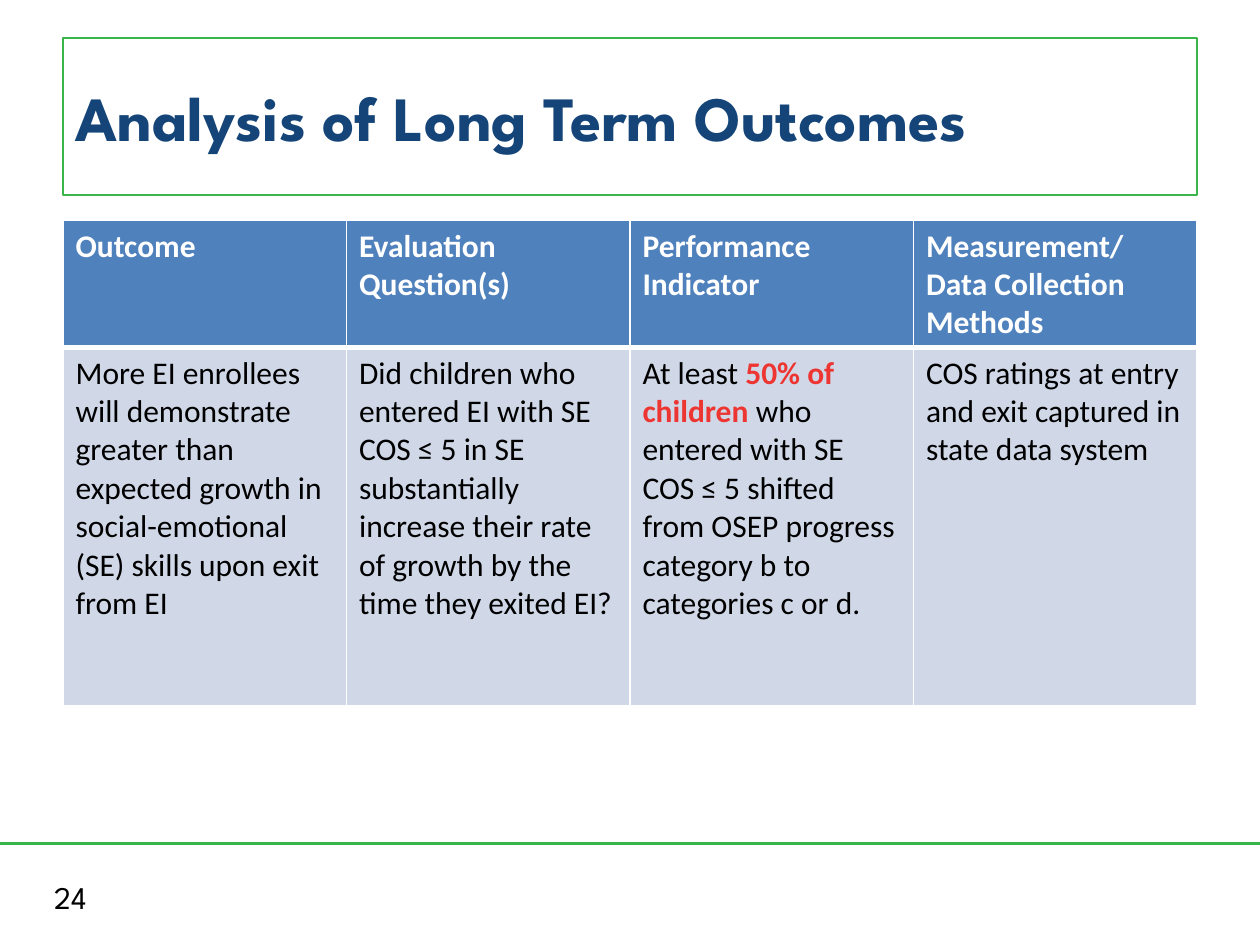
"""Build the long term outcomes analysis slide."""
from dataclasses import dataclass

import lxml.etree
import pptx
import pptx.dml.color
import pptx.enum.shapes
import pptx.enum.text
import pptx.oxml.ns
import pptx.util

Cm = pptx.util.Cm
Pt = pptx.util.Pt


@dataclass(frozen=True)
class Theme:
    green: str = "39B54A"
    navy: str = "154578"
    header_fill: str = "4F81BD"
    body_fill: str = "D0D8E8"
    white: str = "FFFFFF"
    black: str = "000000"
    red: str = "ED3532"
    heading_font: str = "League Spartan"
    table_font: str = "Calibri"
    title_size: int = 36
    text_size: int = 18
    thin_border: float = 1
    thick_border: float = 3


@dataclass(frozen=True)
class Style:
    font: str
    size: float
    color: str
    bold: bool = False


@dataclass(frozen=True)
class TextPart:
    text: str
    style: Style


@dataclass(frozen=True)
class TableRow:
    height: float
    fill: str
    top_border: float
    bottom_border: float
    cells: tuple[tuple[TextPart, ...], ...]


THEME = Theme()
TITLE = Style(THEME.heading_font, THEME.title_size, THEME.navy, True)
NUMBER = Style(THEME.heading_font, THEME.text_size, THEME.black)
HEADER = Style(THEME.table_font, THEME.text_size, THEME.white, True)
BODY = Style(THEME.table_font, THEME.text_size, THEME.black)
EMPHASIS = Style(THEME.table_font, THEME.text_size, THEME.red, True)

MARGIN = 1.27
CONTENT_WIDTH = 22.86
SLIDE_WIDTH = 25.4
SLIDE_HEIGHT = 19.05

HEADINGS = (
    "Outcome",
    "Evaluation Question(s)",
    "Performance Indicator",
    "Measurement/ Data Collection Methods",
)
DETAILS = (
    (TextPart("More EI enrollees will demonstrate greater than expected growth in "
              "social-emotional (SE) skills upon exit from EI", BODY),),
    (TextPart("Did children who entered EI with SE COS ≤ 5 in SE substantially "
              "increase their rate of growth by the time they exited EI?", BODY),),
    (
        TextPart("At least ", BODY),
        TextPart("50% of children ", EMPHASIS),
        TextPart("who entered with SE COS ≤ 5 shifted from OSEP progress "
                 "category b to categories c or d.", BODY),
    ),
    (TextPart("COS ratings at entry and exit captured in state data system", BODY),),
)
ROWS = (
    TableRow(2.56, THEME.header_fill, THEME.thin_border, THEME.thick_border,
             tuple((TextPart(heading, HEADER),) for heading in HEADINGS)),
    TableRow(7.21, THEME.body_fill, THEME.thick_border, THEME.thin_border, DETAILS),
)


def rgb(color: str) -> pptx.dml.color.RGBColor:
    """Convert a hex string to a colour."""
    return pptx.dml.color.RGBColor.from_string(color)


def write_text(text_frame, parts: tuple[TextPart, ...]) -> None:
    """Write styled parts into the first paragraph of a frame."""
    paragraph = text_frame.paragraphs[0]
    paragraph.alignment = pptx.enum.text.PP_ALIGN.LEFT
    for part in parts:
        run = paragraph.add_run()
        run.text = part.text
        style = part.style
        formats = {"name": style.font, "size": Pt(style.size), "bold": style.bold}
        for name, value in formats.items():
            setattr(run.font, name, value)
        run.font.color.rgb = rgb(style.color)


def set_borders(cell, top: float, bottom: float) -> None:
    """Give a cell white borders, placed before its fill."""
    widths = {"lnL": THEME.thin_border, "lnR": THEME.thin_border,
              "lnT": top, "lnB": bottom}
    qualify = pptx.oxml.ns.qn
    properties = cell._tc.get_or_add_tcPr()
    for index, (side, width) in enumerate(widths.items()):
        line = lxml.etree.Element(qualify(f"a:{side}"), w=str(Pt(width)))
        fill = lxml.etree.SubElement(line, qualify("a:solidFill"))
        lxml.etree.SubElement(fill, qualify("a:srgbClr"), val=THEME.white)
        properties.insert(index, line)


def draw_footer(slide) -> None:
    """Draw the footer rule and the page number."""
    rule_top = Cm(17)
    rule = slide.shapes.add_connector(
        pptx.enum.shapes.MSO_CONNECTOR.STRAIGHT, Cm(0), rule_top, Cm(SLIDE_WIDTH), rule_top)
    rule.line.color.rgb = rgb(THEME.green)
    rule.line.width = Pt(1.5)
    lxml.etree.SubElement(rule._element.spPr, pptx.oxml.ns.qn("a:effectLst"))
    number = slide.shapes.add_textbox(Cm(0.84), Cm(17.58), Cm(5.92), Cm(1.02))
    number.text_frame.word_wrap = True
    write_text(number.text_frame, (TextPart("24", NUMBER),))


def draw_title(slide) -> None:
    """Draw the outlined title box."""
    title = slide.shapes.add_shape(
        pptx.enum.shapes.MSO_SHAPE.RECTANGLE,
        Cm(MARGIN), Cm(0.76), Cm(CONTENT_WIDTH), Cm(3.18))
    title.shadow.inherit = False
    title.fill.background()
    title.line.color.rgb = rgb(THEME.green)
    title.line.width = Pt(1)
    formats = {"word_wrap": True, "vertical_anchor": pptx.enum.text.MSO_ANCHOR.MIDDLE}
    for name, value in formats.items():
        setattr(title.text_frame, name, value)
    write_text(title.text_frame, (TextPart("Analysis of Long Term Outcomes", TITLE),))


def draw_table(slide, rows: tuple[TableRow, ...]) -> None:
    """Draw the outcomes table with equal columns."""
    column_count = len(HEADINGS)
    table = slide.shapes.add_table(
        len(rows), column_count, Cm(MARGIN), Cm(4.45),
        Cm(CONTENT_WIDTH), Cm(sum(row.height for row in rows))).table
    table.horz_banding = False
    for column in table.columns:
        column.width = Cm(CONTENT_WIDTH / column_count)
    for row_index, row in enumerate(rows):
        table.rows[row_index].height = Cm(row.height)
        for column_index, parts in enumerate(row.cells):
            cell = table.cell(row_index, column_index)
            cell.fill.solid()
            cell.fill.fore_color.rgb = rgb(row.fill)
            set_borders(cell, row.top_border, row.bottom_border)
            write_text(cell.text_frame, parts)


def main() -> None:
    """Build and save the presentation."""
    presentation = pptx.Presentation()
    presentation.slide_width = Cm(SLIDE_WIDTH)
    presentation.slide_height = Cm(SLIDE_HEIGHT)
    slide = presentation.slides.add_slide(presentation.slide_layouts[6])
    draw_footer(slide)
    draw_title(slide)
    draw_table(slide, ROWS)
    presentation.save("out.pptx")


if __name__ == "__main__":
    main()
